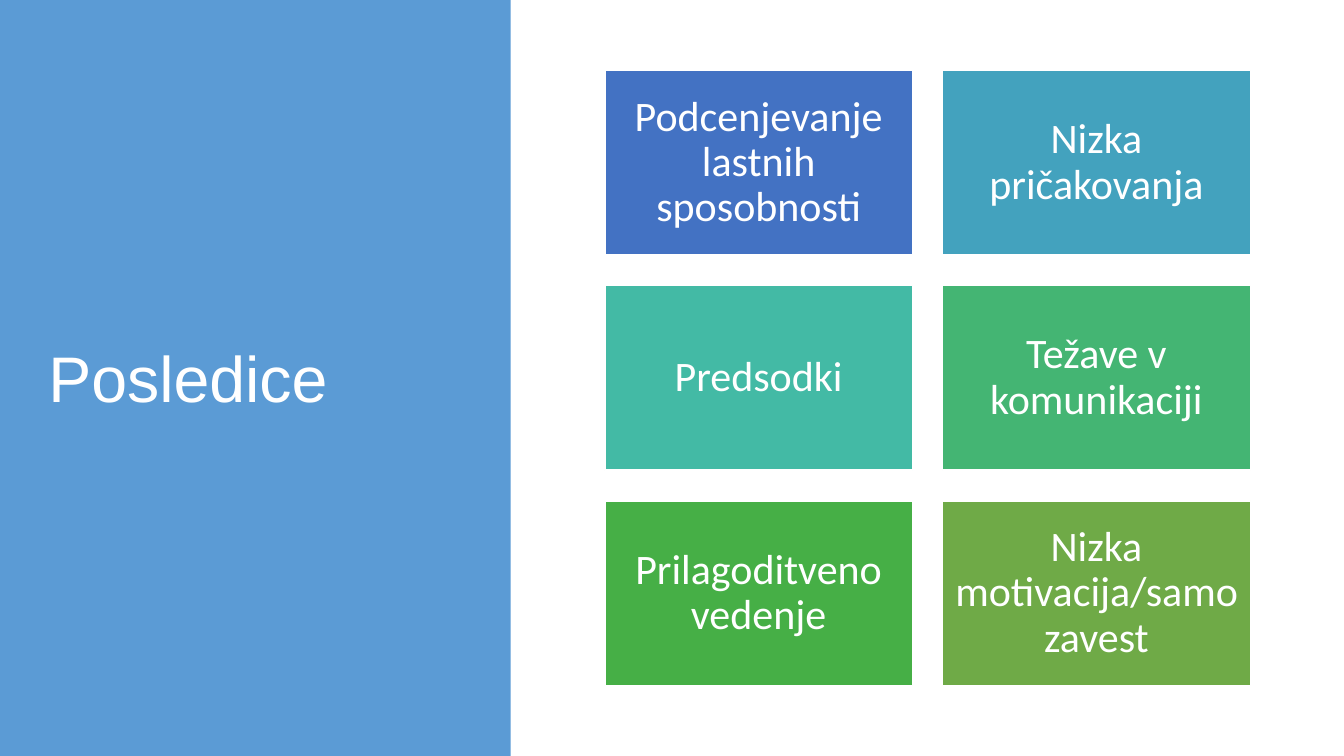
from pptx import Presentation, util as u
from pptx.dml.color import RGBColor
from pptx.enum import shapes, text

WIDTH, HEIGHT = 13.33, 7.5


def paint(target, tone):
    target.solid()
    target.fore_color.rgb = RGBColor.from_string(tone)


def write(shape, words, size, font="Calibri", tone="FFFFFF",
          align=text.PP_ALIGN.CENTER, pad=(0.12, 0.12)):
    frame = shape.text_frame
    frame.word_wrap = True
    frame.auto_size = text.MSO_AUTO_SIZE.NONE
    frame.vertical_anchor = text.MSO_ANCHOR.MIDDLE
    frame.margin_left = frame.margin_right = u.Inches(pad[0])
    frame.margin_top = frame.margin_bottom = u.Inches(pad[1])
    para = frame.paragraphs[0]
    para.alignment = align
    para.line_spacing = 0.9
    run = para.add_run()
    run.text = words
    run.font.size = u.Pt(size)
    run.font.name = font
    paint(run.font.fill, tone)


class Deck:
    # Tile grid in inches: origin, tile size and gaps
    left, top = 6, 0.7
    wide, high = 3.05, 1.83
    gap_x, gap_y = 0.3, 0.305

    def __init__(self):
        self.show = Presentation()
        self.show.slide_width = u.Inches(WIDTH)
        self.show.slide_height = u.Inches(HEIGHT)
        self.slide = self.show.slides.add_slide(self.show.slide_layouts[5])

    def box(self, x, y, w, h, fill, line=None):
        shape = self.slide.shapes.add_shape(
            shapes.MSO_SHAPE.RECTANGLE, *map(u.Inches, (x, y, w, h)))
        shape.shadow.inherit = False
        paint(shape.fill, fill)
        if line:
            paint(shape.line.fill, line)
            shape.line.width = u.Pt(1)
        else:
            shape.line.fill.background()
        return shape

    def panel(self, share, fill):
        shape = self.box(0, 0, share * WIDTH, HEIGHT, fill)
        # Keep the panel behind the title
        self.slide.shapes.title.element.addprevious(shape.element)

    def title(self, words):
        head = self.slide.shapes.title
        head.left, head.top, head.width, head.height = map(
            u.Inches, (0.38, 0.78, 4.34, 6.02))
        write(head, words, 46, font="Arial",
              align=text.PP_ALIGN.LEFT, pad=(0.1, 0.05))

    def tile(self, col, row, words, fill):
        shape = self.box(self.left + col * (self.wide + self.gap_x),
                         self.top + row * (self.high + self.gap_y),
                         self.wide, self.high, fill, line="FFFFFF")
        write(shape, words, 30)


TILES = [
    ("Podcenjevanje lastnih sposobnosti", "4372C3"),
    ("Nizka pričakovanja", "43A2BE"),
    ("Predsodki", "43BAA5"),
    ("Težave v komunikaciji", "44B573"),
    ("Prilagoditveno vedenje", "46AF46"),
    ("Nizka motivacija/samozavest", "6FAA47"),
]


def main():
    deck = Deck()

    # Title side
    deck.panel(0.38, "5B9BD5")
    deck.title("Posledice")

    # Two columns of consequences
    for n, (words, fill) in enumerate(TILES):
        deck.tile(n % 2, n // 2, words, fill)

    deck.show.save("out.pptx")


if __name__ == "__main__":
    main()
